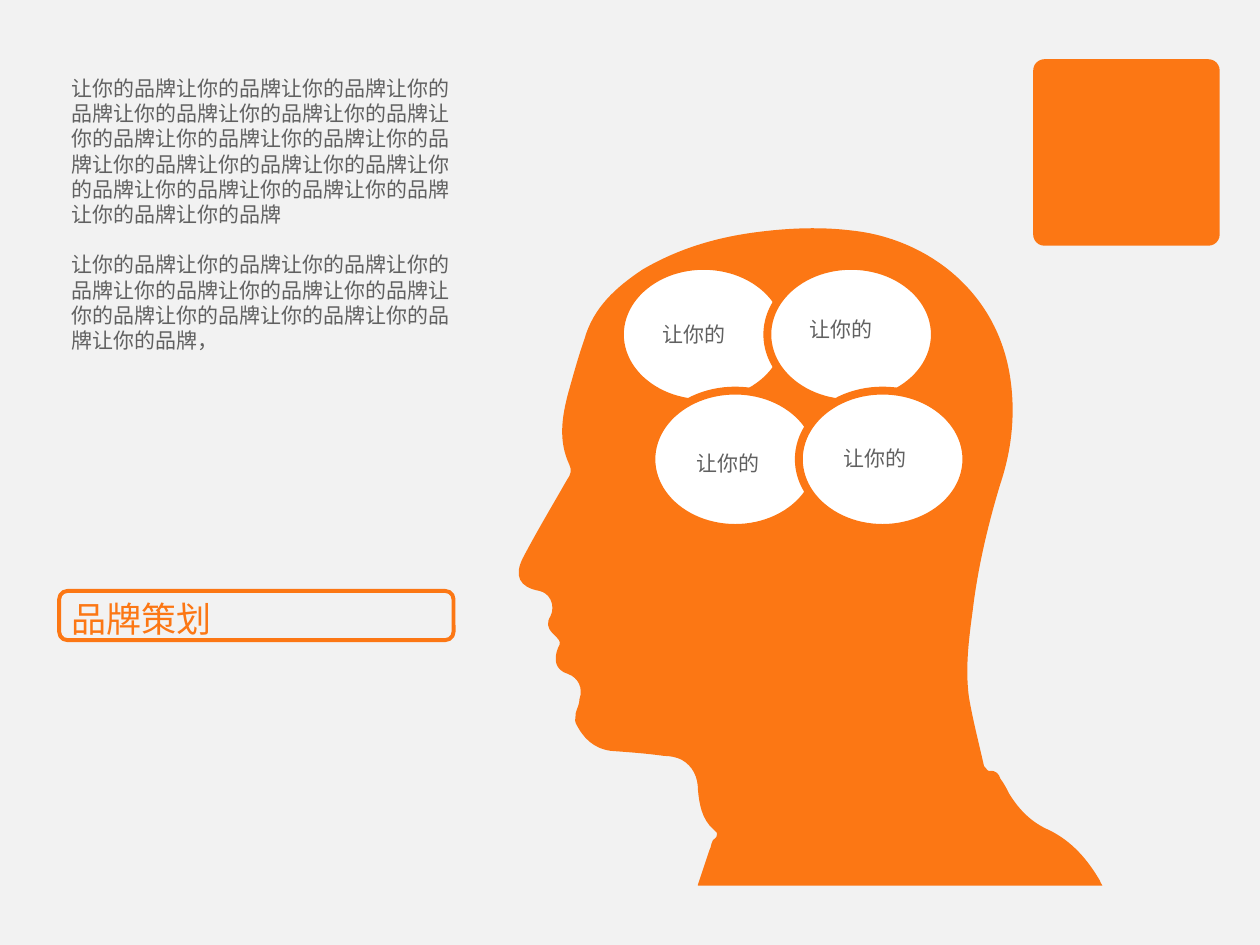
"""Build the brand planning slide with a head silhouette and four thought bubbles."""
from pptx import Presentation
from pptx import util as u
from pptx.dml.color import RGBColor
from pptx.enum import shapes, text
from pptx.oxml import ns
from lxml import etree

PX = u.Inches(1) // 100
ORANGE = RGBColor(0xFC, 0x77, 0x14)
GREY = RGBColor(0x60, 0x60, 0x60)
WHITE = RGBColor(0xFF, 0xFF, 0xFF)
PAPER = RGBColor(0xF2, 0xF2, 0xF2)
FONT = "Noto Sans CJK SC"
PHRASE = "让你的品牌"
HEAD_START = (873, 699)
HEAD_CURVES = [
    (863, 682, 851, 668, 833, 659), (819, 653, 809, 643, 801, 630),
    (799, 626, 797, 622, 794, 618), (793, 615, 791, 611, 785, 612),
    (784, 612, 782, 609, 781, 608), (777, 590, 772, 571, 769, 553),
    (766, 530, 769, 507, 772, 485), (776, 451, 784, 417, 794, 384),
    (803, 357, 806, 329, 802, 301), (792, 230, 734, 189, 676, 183),
    (652, 180, 627, 181, 603, 184), (570, 188, 539, 197, 510, 214),
    (489, 228, 471, 244, 464, 269), (459, 283, 455, 298, 451, 312),
    (446, 331, 443, 350, 452, 369), (454, 373, 453, 377, 450, 381),
    (438, 402, 426, 422, 415, 443), (408, 457, 412, 466, 428, 469),
    (432, 470, 435, 472, 437, 476), (439, 480, 439, 485, 437, 489),
    (434, 494, 434, 498, 439, 503), (440, 504, 441, 505, 442, 506),
    (445, 509, 445, 511, 443, 514), (439, 524, 441, 532, 451, 535),
    (459, 538, 463, 546, 460, 555), (460, 559, 458, 562, 457, 566),
    (457, 569, 456, 572, 457, 574), (463, 586, 471, 594, 485, 596),
    (499, 597, 513, 598, 527, 600), (532, 600, 537, 601, 541, 603),
    (550, 608, 554, 617, 554, 627), (555, 638, 557, 650, 566, 658),
    (567, 659, 568, 660, 569, 661), (569, 663, 569, 665, 568, 665),
    (564, 667, 565, 672, 563, 675), (560, 684, 557, 693, 554, 702),
    (554, 702, 554, 702, 554, 703), (661, 703, 768, 703, 875, 703),
    (874, 701, 873, 700, 873, 699),
]


def place(sp, x, y, w, h):
    sp.left, sp.top, sp.width, sp.height = (v * PX for v in (x, y, w, h))


def write(tf, lines, size, color):
    tf.word_wrap = True
    tf.auto_size = text.MSO_AUTO_SIZE.SHAPE_TO_FIT_TEXT
    tf.vertical_anchor = text.MSO_ANCHOR.TOP
    tf.text = "\n".join(lines)
    for p in tf.paragraphs:
        p.alignment = text.PP_ALIGN.LEFT
        p.space_before = u.Pt(0)
        p.font.size = u.Pt(size)
        p.font.name = FONT
        p.font.color.rgb = color
        pPr = p._p.get_or_add_pPr()
        pPr.set("marL", "0")
        pPr.set("indent", "0")
        defaults = pPr.find(ns.qn("a:defRPr"))
        etree.SubElement(defaults, ns.qn("a:ea"), typeface=FONT)
        defaults.addprevious(etree.Element(ns.qn("a:buNone")))


prs = Presentation()
prs.slide_width, prs.slide_height = 1000 * PX, 750 * PX
s = prs.slides.add_slide(prs.slide_layouts[1])
s.background.fill.solid()
s.background.fill.fore_color.rgb = PAPER

title, body = s.placeholders
place(title, 47, 469, 134, 44)
write(title.text_frame, ["品牌策划"], 20, ORANGE)
place(body, 47, 55, 336, 232)
write(body.text_frame, [PHRASE * 20, PHRASE * 12 + "，"], 12, GREY)
body.text_frame.paragraphs[1].space_before = u.Pt(14.4)

ROUND = shapes.MSO_SHAPE.ROUNDED_RECTANGLE
square = s.shapes.add_shape(ROUND, 820 * PX, 47 * PX, 148 * PX, 148 * PX)
square.adjustments[0] = 0.06
square.fill.solid()
square.fill.fore_color.rgb = ORANGE
square.line.fill.background()
square.shadow.inherit = False

frame = s.shapes.add_shape(ROUND, 47 * PX, 469 * PX, 313 * PX, 39 * PX)
frame.fill.background()
frame.line.color.rgb = ORANGE
frame.line.width = u.Pt(2.25)
frame.shadow.inherit = False

builder = s.shapes.build_freeform(*HEAD_START, scale=PX)
for curve in HEAD_CURVES:
    builder.add_line_segments(list(zip(curve[::2], curve[1::2])), close=False)
head = builder.convert_to_shape()
head.fill.solid()
head.fill.fore_color.rgb = ORANGE
head.line.fill.background()
head.shadow.inherit = False

outline = head._element.find(".//" + ns.qn("a:pathLst"))[0]
segments = outline.findall(ns.qn("a:lnTo"))
for i in range(0, len(segments), 3):
    bezier = etree.SubElement(outline, ns.qn("a:cubicBezTo"))
    for segment in segments[i:i + 3]:
        bezier.append(segment[0])
        outline.remove(segment)
etree.SubElement(outline, ns.qn("a:close"))

ROWS = [(492, 211, 516, 250), (517, 310, 543, 353)]
COLUMN = 117
for x, y, _, _ in ROWS:
    for col in range(2):
        sp = s.shapes.add_shape(shapes.MSO_SHAPE.OVAL, (x + col * COLUMN) * PX,
                                y * PX, 133 * PX, 109 * PX)
        sp.fill.solid()
        sp.fill.fore_color.rgb = WHITE
        sp.line.color.rgb = ORANGE
        sp.line.width = u.Pt(4.5)
        sp.shadow.inherit = False

for _, _, x, y in ROWS:
    for col in range(2):
        sp = s.shapes.add_textbox((x + col * COLUMN) * PX, (y - col * 4) * PX,
                                  87 * PX, 30 * PX)
        write(sp.text_frame, ["让你的"], 12, GREY)

prs.save("out.pptx")
